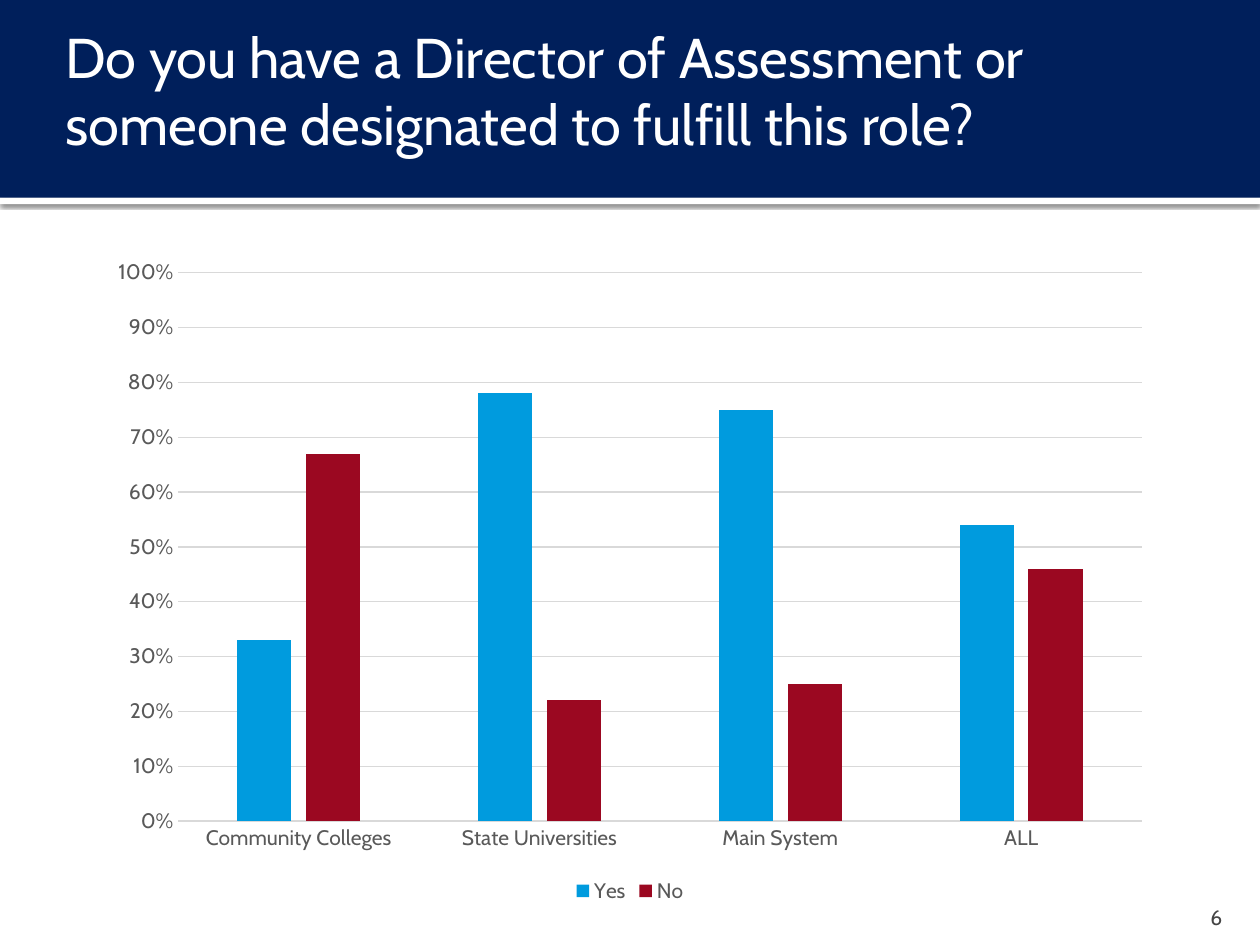
from lxml import etree
from pptx import Presentation
from pptx.chart.data import CategoryChartData
from pptx.dml.color import RGBColor
from pptx.enum import chart as charts, shapes, text
from pptx.oxml.ns import qn
from pptx.util import Inches, Pt

FONT = "Cabin"
WHITE = RGBColor(0xFF, 0xFF, 0xFF)
NAVY = RGBColor(0x00, 0x1F, 0x5B)
BLUE = RGBColor(0x00, 0x9B, 0xDE)
RED = RGBColor(0x9B, 0x08, 0x21)
DARK_GREY = RGBColor(0x45, 0x45, 0x45)
LABEL_GREY = RGBColor(0x59, 0x59, 0x59)
GRID_GREY = RGBColor(0xD9, 0xD9, 0xD9)

CATEGORIES = ["Community Colleges", "State Universities", "Main System", "ALL"]
SERIES = [
    ("Yes", [0.33, 0.78, 0.75, 0.54], BLUE),
    ("No", [0.67, 0.22, 0.25, 0.46], RED),
]


def inches(box):
    return [Inches(length) for length in box]


def set_font(font, size, color):
    font.name = FONT
    font.size = Pt(size)
    font.color.rgb = color


def add_band(slide, box, color):
    band = slide.shapes.add_shape(shapes.MSO_SHAPE.RECTANGLE, *inches(box))
    band.shadow.inherit = False
    band.fill.solid()
    band.fill.fore_color.rgb = color
    band.line.fill.background()
    return band


def add_drop_shadow(shape):
    effects = shape._element.spPr.find(qn("a:effectLst"))
    shadow = etree.SubElement(
        effects, qn("a:outerShdw"), blurRad=str(Pt(2.5)), dist=str(Pt(0.8)),
        dir="5400000", algn="ctr", rotWithShape="0")
    color = etree.SubElement(shadow, qn("a:srgbClr"), val="000000")
    etree.SubElement(color, qn("a:alpha"), val="60000")


def add_text(slide, box, content, *, size, color, anchor, margins,
             align=text.PP_ALIGN.LEFT):
    frame = slide.shapes.add_textbox(*inches(box)).text_frame
    frame.word_wrap = True
    frame.vertical_anchor = anchor
    (frame.margin_left, frame.margin_top,
     frame.margin_right, frame.margin_bottom) = inches(margins)
    paragraph = frame.paragraphs[0]
    paragraph.alignment = align
    run = paragraph.add_run()
    run.text = content
    set_font(run.font, size, color)


def format_line(line):
    line.color.rgb = GRID_GREY
    line.width = Pt(0.75)


def format_axes(chart):
    for axis in (chart.category_axis, chart.value_axis):
        axis.major_tick_mark = charts.XL_TICK_MARK.NONE
        axis.minor_tick_mark = charts.XL_TICK_MARK.NONE
        set_font(axis.tick_labels.font, 12, LABEL_GREY)
    format_line(chart.category_axis.format.line)

    value_axis = chart.value_axis
    value_axis.minimum_scale = 0
    value_axis.maximum_scale = 1
    value_axis.major_unit = 0.1
    value_axis.tick_labels.number_format = "0%"
    value_axis.tick_labels.number_format_is_linked = False
    value_axis.format.line.fill.background()
    value_axis.has_major_gridlines = True
    format_line(value_axis.major_gridlines.format.line)


def add_column_chart(slide, box):
    data = CategoryChartData(number_format="0%")
    data.categories = CATEGORIES
    for name, values, _ in SERIES:
        data.add_series(name, values)
    chart = slide.shapes.add_chart(
        charts.XL_CHART_TYPE.COLUMN_CLUSTERED, *inches(box), data).chart
    chart.has_title = False
    chart.font.name = FONT
    chart.font.size = Pt(10)

    plot = chart.plots[0]
    plot.vary_by_categories = False
    plot.gap_width = 219
    plot.overlap = -27
    for series, (_, _, color) in zip(plot.series, SERIES):
        series.format.fill.solid()
        series.format.fill.fore_color.rgb = color
    format_axes(chart)

    chart.has_legend = True
    chart.legend.position = charts.XL_LEGEND_POSITION.BOTTOM
    chart.legend.include_in_layout = False
    set_font(chart.legend.font, 12, LABEL_GREY)


def main():
    presentation = Presentation()
    presentation.slide_width = Inches(10)
    presentation.slide_height = Inches(7.5)
    slide = presentation.slides.add_slide(presentation.slide_layouts[6])

    add_drop_shadow(add_band(slide, (0, 1.57, 10, 0.05), WHITE))
    add_band(slide, (0, 0, 10, 1.57), NAVY)
    add_text(slide, (9, 7.08, 0.8, 0.3), "6", size=12, color=DARK_GREY,
             anchor=text.MSO_ANCHOR.BOTTOM, margins=(0.1, 0.05, 0.1, 0),
             align=text.PP_ALIGN.RIGHT)
    add_text(slide, (0.42, 0.25, 9.17, 0.92),
             "Do you have a Director of Assessment or someone designated "
             "to fulfill this role?",
             size=32, color=WHITE, anchor=text.MSO_ANCHOR.MIDDLE,
             margins=(0.1, 0.05, 0.05, 0.05))
    add_column_chart(slide, (0.77, 1.96, 8.46, 5.25))

    presentation.save("out.pptx")


if __name__ == "__main__":
    main()
